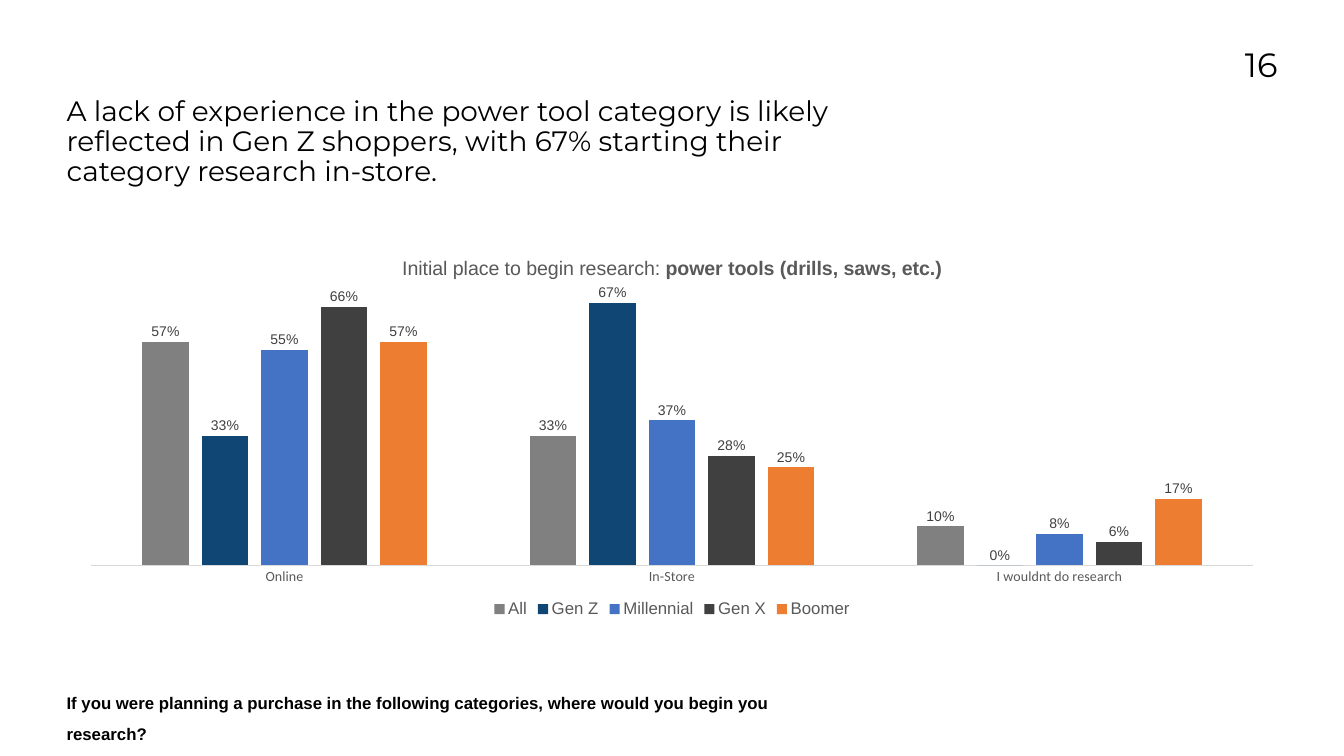
from pptx import Presentation
from pptx.chart.data import CategoryChartData
from pptx.dml.color import RGBColor
from pptx.enum.chart import (XL_CHART_TYPE, XL_LABEL_POSITION,
                             XL_LEGEND_POSITION, XL_TICK_MARK)
from pptx.enum.text import MSO_ANCHOR, MSO_AUTO_SIZE, PP_ALIGN
from pptx.oxml import parse_xml
from pptx.oxml.ns import nsdecls, qn
from pptx.util import Inches, Pt

CLUSTERED = XL_CHART_TYPE.COLUMN_CLUSTERED
OUTSIDE_END = XL_LABEL_POSITION.OUTSIDE_END
BOTTOM = XL_LEGEND_POSITION.BOTTOM
NO_TICK = XL_TICK_MARK.NONE
TOP = MSO_ANCHOR.TOP
LEFT, RIGHT = PP_ALIGN.LEFT, PP_ALIGN.RIGHT

BLACK = RGBColor(0x00, 0x00, 0x00)
DARK_GRAY = RGBColor(0x40, 0x40, 0x40)
TEXT_GRAY = RGBColor(0x59, 0x59, 0x59)
MID_GRAY = RGBColor(0x80, 0x80, 0x80)
LIGHT_GRAY = RGBColor(0xD9, 0xD9, 0xD9)
NAVY = RGBColor(0x10, 0x46, 0x74)
BLUE = RGBColor(0x44, 0x72, 0xC4)
ORANGE = RGBColor(0xED, 0x7D, 0x31)

PAGE_WIDTH, PAGE_HEIGHT = 26.67, 15
MARGIN = 1.32
CONTENT_WIDTH = PAGE_WIDTH - 2 * MARGIN

NUMBER_BOX = (PAGE_WIDTH - MARGIN - 2.25, 0.88, 2.25, 1.64)
TITLE_BOX = (MARGIN, 1.93, CONTENT_WIDTH * 2 / 3, 2.08)
CHART_BOX = (MARGIN, 4.88, CONTENT_WIDTH, 7.46)
QUESTION_BOX = (MARGIN, 13.55, CONTENT_WIDTH * 0.6, 0.65)

# Inner plot area, as shares of the chart's box
PLOT_SHARES = {"x": 0.02, "y": 0.12, "w": 0.96, "h": 0.73}

PLACES = ["Online", "In-Store", "I wouldnt do research"]
GENERATIONS = [
    ("All", MID_GRAY, (0.57, 0.33, 0.10)),
    ("Gen Z", NAVY, (0.33, 0.67, 0)),
    ("Millennial", BLUE, (0.55, 0.37, 0.08)),
    ("Gen X", DARK_GRAY, (0.66, 0.28, 0.06)),
    ("Boomer", ORANGE, (0.57, 0.25, 0.17)),
]


def set_font(font, color, **values):
    for name, value in values.items():
        setattr(font, name, value)
    font.color.rgb = color


def place(shape, box):
    shape.left, shape.top, shape.width, shape.height = map(Inches, box)


def write_text(shape, box, text, align=LEFT, spacing=1.0, **font):
    place(shape, box)
    frame = shape.text_frame
    frame_format = {"word_wrap": True, "auto_size": MSO_AUTO_SIZE.NONE,
                    "vertical_anchor": TOP, "margin_left": 0,
                    "margin_right": 0, "margin_top": 0, "margin_bottom": 0}
    for name, value in frame_format.items():
        setattr(frame, name, value)
    para = frame.paragraphs[0]
    para.alignment, para.line_spacing, para.space_before = align, spacing, Pt(0)
    span = para.add_run()
    span.text = text
    set_font(span.font, BLACK, **font)


def set_plot_area(chart):
    """Fix the inner plot area at its shares of the chart's box."""
    plot_area = chart.plots[0]._element.getparent()
    for old in plot_area.findall(qn("c:layout")):
        plot_area.remove(old)
    modes = "".join(f'<c:{key}Mode val="edge"/>' for key in "xy")
    shares = "".join(f'<c:{key} val="{share}"/>'
                     for key, share in PLOT_SHARES.items())
    plot_area.insert(0, parse_xml(
        f'<c:layout {nsdecls("c")}><c:manualLayout>'
        f'<c:layoutTarget val="inner"/>{modes}{shares}'
        '</c:manualLayout></c:layout>'))


def add_chart_title(chart):
    chart.has_title = True
    para = chart.chart_title.text_frame.paragraphs[0]
    for text, bold in (("Initial place to begin research: ", False),
                       ("power tools (drills, saws, etc.)", True)):
        span = para.add_run()
        span.text = text
        set_font(span.font, TEXT_GRAY, name="Arial", size=Pt(28), bold=bold)


def format_axes(chart):
    places = chart.category_axis
    places.major_tick_mark = places.minor_tick_mark = NO_TICK
    places.format.line.color.rgb = LIGHT_GRAY
    places.format.line.width = Pt(0.75)
    set_font(places.tick_labels.font, TEXT_GRAY, name="Calibri", size=Pt(20))
    shares = chart.value_axis
    shares.minimum_scale, shares.maximum_scale = 0, 0.7
    shares.has_major_gridlines = shares.visible = False


def format_series(series, color):
    series.format.fill.solid()
    series.format.fill.fore_color.rgb = color
    series.invert_if_negative = False
    labels = series.data_labels
    label_format = {"show_value": True, "position": OUTSIDE_END,
                    "number_format": "0%", "number_format_is_linked": False}
    for name, value in label_format.items():
        setattr(labels, name, value)
    set_font(labels.font, DARK_GRAY, name="Arial", size=Pt(20))


def add_research_chart(page, box):
    data = CategoryChartData(number_format="0%")
    data.categories = PLACES
    for name, _, values in GENERATIONS:
        data.add_series(name, values)
    chart = page.shapes.add_chart(CLUSTERED, *map(Inches, box), data).chart
    set_font(chart.font, BLACK, name="Calibri", size=Pt(10))
    add_chart_title(chart)
    format_axes(chart)
    set_plot_area(chart)

    plot = chart.plots[0]
    plot.gap_width, plot.overlap, plot.vary_by_categories = 219, -27, False
    for series, (_, color, _) in zip(plot.series, GENERATIONS):
        format_series(series, color)

    chart.has_legend = True
    chart.legend.position = BOTTOM
    chart.legend.include_in_layout = False
    set_font(chart.legend.font, TEXT_GRAY, name="Arial", size=Pt(24))


def add_text_box(page, box, text, **values):
    write_text(page.shapes.add_textbox(*map(Inches, box)), box, text, **values)


def main():
    deck = Presentation()
    deck.slide_width, deck.slide_height = Inches(PAGE_WIDTH), Inches(PAGE_HEIGHT)
    page = deck.slides.add_slide(deck.slide_layouts[5])
    add_text_box(page, NUMBER_BOX, "16", align=RIGHT,
                 name="Montserrat", size=Pt(48))
    add_research_chart(page, CHART_BOX)
    write_text(page.shapes.title, TITLE_BOX,
               "A lack of experience in the power tool category is likely "
               "reflected in Gen Z shoppers, with 67% starting their "
               "category research in-store.",
               spacing=0.9, name="Montserrat", size=Pt(40))
    add_text_box(page, QUESTION_BOX,
                 "If you were planning a purchase in the following "
                 "categories, where would you begin you research?",
                 spacing=1.5, name="Arial", size=Pt(24), bold=True)
    deck.save("out.pptx")


if __name__ == "__main__":
    main()
